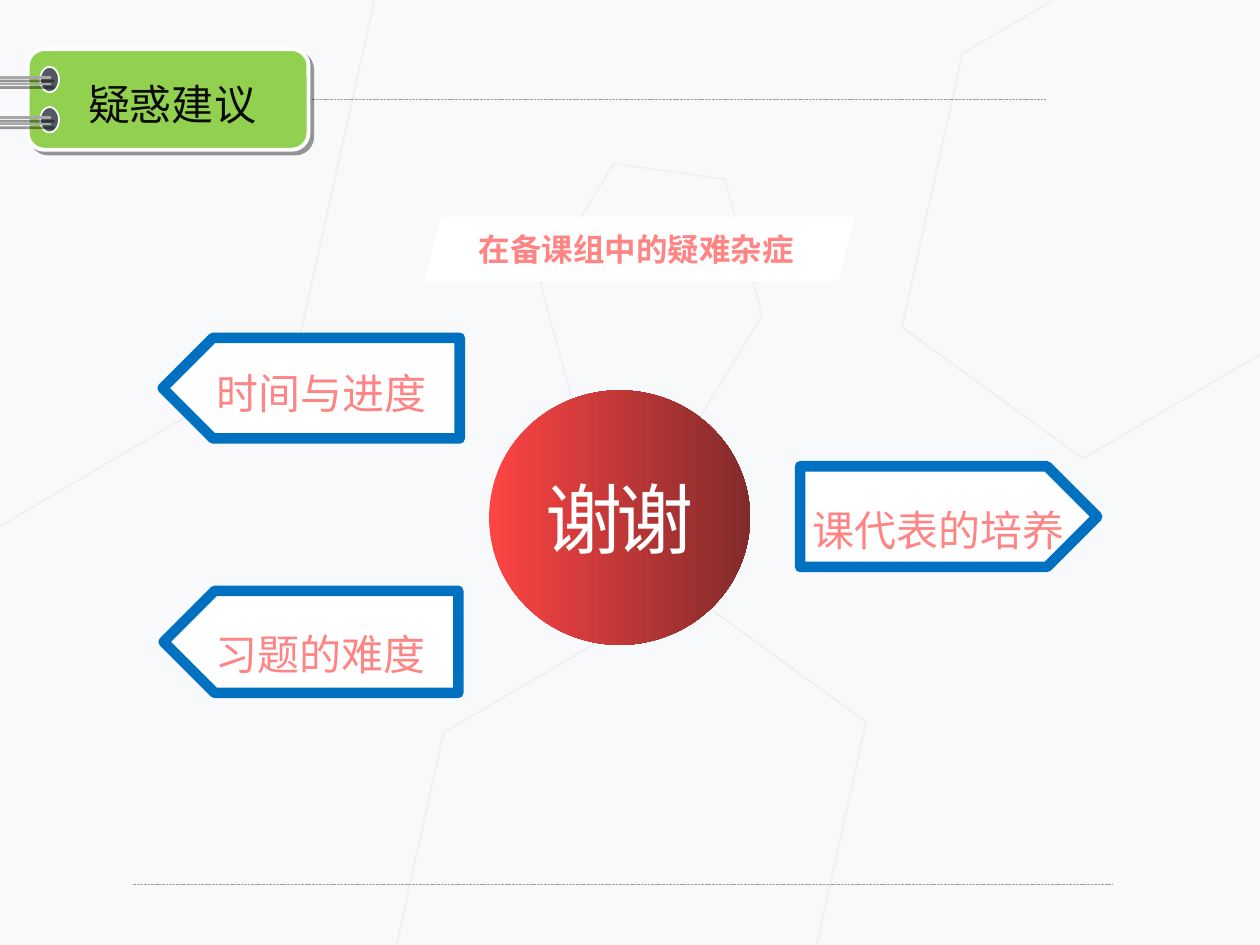
from lxml.etree import SubElement
from pptx import Presentation
from pptx.dml.color import RGBColor
from pptx.enum.dml import MSO_LINE
from pptx.enum.shapes import MSO_CONNECTOR, MSO_SHAPE
from pptx.enum.text import MSO_ANCHOR, PP_ALIGN
from pptx.oxml.ns import qn
from pptx.util import Cm, Pt

THEME = {
    "background": "F8F9FB", "white": "FFFFFF", "hexagon": "D9D9D9", "dash": "9F9F9F",
    "card": "92D050", "ring": "515A61", "wire": "A8A7AA", "border": "0070C0",
    "pink": "FF8585", "ink": "0A0A0A", "red": "FE4444", "dark red": "832B2B",
    "font": "Noto Sans CJK SC", "closing font": "Roboto Condensed",
    "banner size": 18, "label size": 24, "closing size": 44,
}

# Boxes are left, top, width, height in centimetres.
TITLE = ("疑惑建议", (1.52, 1.45, 5.56, 1.27))
BANNER = ("在备课组中的疑难杂症", (8.56, 4.37, 8.66, 1.3), (8.71, 4.55, 8.23, 0.91))
CLOSING = ("谢谢", (9.86, 7.87, 5.26, 5.13))
TAGS = [  # text, arrow box, text box, points left
    ("课代表的培养", (16.13, 9.4, 5.99, 2.03), (16.13, 9.53, 5.77, 1.78), False),
    ("时间与进度", (3.28, 6.81, 5.99, 2.03), (4.11, 6.78, 5, 1.78), True),
    ("习题的难度", (3.3, 11.91, 5.94, 2.06), (4.09, 12.04, 4.88, 1.78), True),
]
HEXAGONS = [  # box, rotation, opacity in percent
    ((-6.45, -4.85, 13.74, 15.8), 36, 29),
    ((8.08, 12.24, 9.02, 10.36), 36, 29),
    ((18.54, -1.45, 9.02, 10.36), 36, 29),
    ((10.87, 3.43, 4.52, 5.21), 8, 26),
]
DASHES = [(6.22, 21.08, 2.01), (2.69, 22.43, 17.83)]  # start, end, height
CARD = (0.56, 0.99, 5.66, 2.03)
RING_TOPS = (1.35, 2.16)
WIRE_OFFSETS = (0.21, 0.34)


def color(name):
    return RGBColor.from_string(THEME[name])


def set_values(target, values):
    for name, value in values.items():
        setattr(target, name, value)


def place(shape, box):
    set_values(shape, dict(zip(("left", "top", "width", "height"), map(Cm, box))))


def set_line(shape, name, width):
    shape.line.color.rgb = color(name)
    shape.line.width = Pt(width)


def add_shadow(shape, visible=True):
    """Give the shape an offset shadow, or an empty effect list."""
    properties = shape._element.spPr
    for old in properties.findall(qn("a:effectLst")):
        properties.remove(old)
    effects = SubElement(properties, qn("a:effectLst"))
    if visible:
        shadow = SubElement(effects, qn("a:outerShdw"), blurRad="0", dist="38100",
                            dir="2700000", algn="tl", rotWithShape="0")
        black = SubElement(shadow, qn("a:srgbClr"), val="000000")
        SubElement(black, qn("a:alpha"), val="40000")


def add_preset(shapes, kind, box, fill=None, line=None, width=1):
    shape = shapes.add_shape(kind, *map(Cm, box))
    shape.shadow.inherit = False
    if fill:
        shape.fill.solid()
        shape.fill.fore_color.rgb = color(fill)
    else:
        shape.fill.background()
    if line:
        set_line(shape, line, width)
    else:
        shape.line.fill.background()
    return shape


def add_line(shapes, start, end, height, name, width):
    line = shapes.add_connector(MSO_CONNECTOR.STRAIGHT, *map(Cm, (start, height, end, height)))
    set_line(line, name, width)
    return line


def write(shape, text, size, text_color, font="font", bold=False, frame=None, paragraph=None):
    text_frame = shape.text_frame
    set_values(text_frame, {"word_wrap": True, "vertical_anchor": MSO_ANCHOR.TOP, **(frame or {})})
    line = text_frame.paragraphs[0]
    set_values(line, {"alignment": PP_ALIGN.LEFT, **(paragraph or {})})
    run = line.add_run()
    run.text = text
    set_values(run.font, {"size": Pt(THEME[size]), "name": THEME[font], "bold": bold})
    run.font.color.rgb = color(text_color)
    properties = run._r.get_or_add_rPr()
    SubElement(properties, qn("a:ea"), typeface=THEME[font])
    return properties


def add_hexagons(shapes):
    for box, rotation, opacity in HEXAGONS:
        hexagon = add_preset(shapes, MSO_SHAPE.HEXAGON, box, line="hexagon")
        hexagon.rotation = rotation
        line_color = hexagon.line._ln.find(".//" + qn("a:srgbClr"))
        SubElement(line_color, qn("a:alpha"), val=str(opacity * 1000))


def add_title_card(shapes):
    card = add_preset(shapes, MSO_SHAPE.ROUNDED_RECTANGLE, CARD, "card", "white", 2.25)
    add_shadow(card)
    for top in RING_TOPS:
        add_preset(shapes, MSO_SHAPE.OVAL, (0.81, top, 0.38, 0.51), "ring", "white")
    for top in RING_TOPS:
        for offset in WIRE_OFFSETS:
            add_shadow(add_line(shapes, -0.18, 1.02, top + offset, "wire", 1.5))
    text, box = TITLE
    title = shapes.title
    place(title, box)
    write(title, text, "label size", "ink")
    card._element.getparent().append(title._element)  # bring in front of the card


def add_banner(shapes):
    text, box, text_box = BANNER
    group = shapes.add_group_shape().shapes
    add_preset(group, MSO_SHAPE.PARALLELOGRAM, box, "white")
    margins = {"margin_left": Cm(0.15), "margin_right": Cm(0.15),
               "margin_top": Cm(0.08), "margin_bottom": Cm(0.08)}
    write(group.add_textbox(*map(Cm, text_box)), text, "banner size", "pink", bold=True,
          frame=margins, paragraph={"alignment": PP_ALIGN.CENTER})


def add_tag(shapes, text, box, text_box, points_left):
    group = shapes.add_group_shape().shapes
    arrow = add_preset(group, MSO_SHAPE.PENTAGON, box, "white", "border", 6)
    if points_left:
        arrow._element.spPr.find(qn("a:xfrm")).set("flipH", "1")
    write(group.add_textbox(*map(Cm, text_box)), text, "label size", "pink",
          paragraph={"line_spacing": 1.5})


def add_closing(shapes):
    text, box = CLOSING
    circle = add_preset(shapes, MSO_SHAPE.OVAL, box)
    circle.fill.gradient()
    circle.fill.gradient_angle = 0
    for stop, name, position in zip(circle.fill.gradient_stops, ("red", "dark red"), (0, 1)):
        stop.color.rgb = color(name)
        stop.position = position
    properties = write(circle, text, "closing size", "white", "closing font",
                       frame={"vertical_anchor": MSO_ANCHOR.MIDDLE},
                       paragraph={"alignment": PP_ALIGN.CENTER})
    properties.set("spc", "-300")


def main():
    presentation = Presentation()
    set_values(presentation, {"slide_width": Cm(25.4), "slide_height": Cm(19.05)})
    slide = presentation.slides.add_slide(presentation.slide_layouts[5])
    slide.background.fill.solid()
    slide.background.fill.fore_color.rgb = color("background")
    shapes = slide.shapes
    add_hexagons(shapes)
    for start, end, height in DASHES:
        line = add_line(shapes, start, end, height, "dash", 0.5)
        line.line.dash_style = MSO_LINE.SQUARE_DOT
        add_shadow(line, visible=False)
    add_title_card(shapes)
    add_banner(shapes)
    for tag in TAGS:
        add_tag(shapes, *tag)
    add_closing(shapes)
    presentation.save("out.pptx")


if __name__ == "__main__":
    main()
